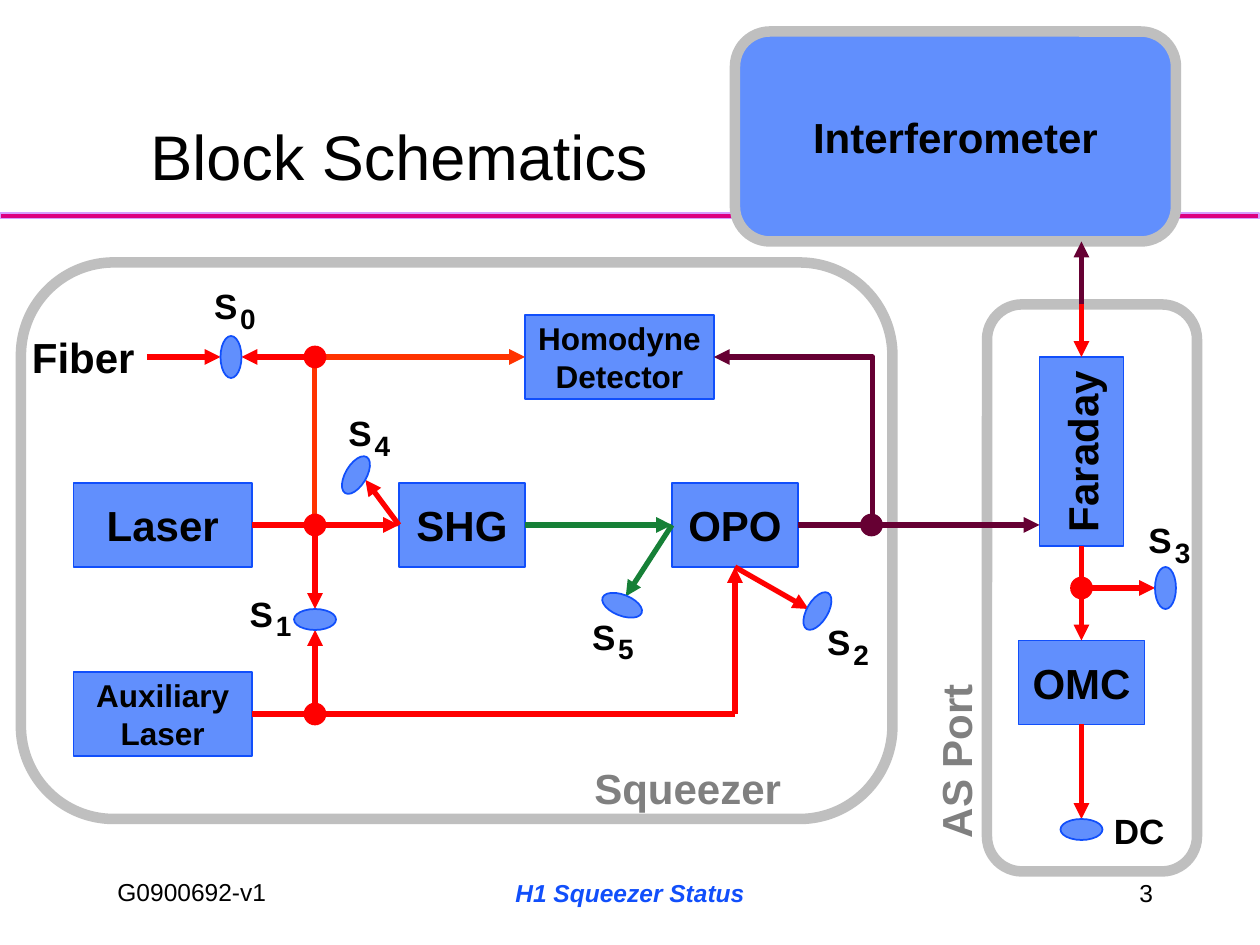
"""Build the block schematics slide on a grid of one twelfth of an inch."""
import pptx
import pptx.util
from lxml import etree
from pptx.dml.color import RGBColor
from pptx.enum.shapes import MSO_CONNECTOR, MSO_SHAPE
from pptx.enum.text import MSO_ANCHOR, PP_ALIGN
from pptx.oxml.ns import qn

COLORS = {
    "black": "000000", "gray": "808080", "frame": "BFBFBF",
    "box": "618FFD", "blue": "114FFB", "red": "FF0000",
    "orange": "FF3300", "green": "168037", "purple": "660033",
    "rule": "DC0081", "rule_edge": "D49FFF",
}


def color(name):
    return RGBColor.from_string(COLORS[name])


def grid(*values):
    return [pptx.util.Cm(value * 2.54 / 12) for value in values]


def write(shape, text, size, ink="black", align=PP_ALIGN.CENTER,
          anchor=MSO_ANCHOR.MIDDLE, bold=True, italic=False):
    frame = shape.text_frame
    frame.text = text
    frame.word_wrap = True
    frame.vertical_anchor = anchor
    for paragraph in frame.paragraphs:
        paragraph.alignment = align
        font = paragraph.font
        font.name = "Arial"
        font.size = pptx.util.Pt(size)
        font.bold = bold
        font.italic = italic
        font.color.rgb = color(ink)


def add_shape(slide, kind, bounds, fill, line, width=1):
    shape = slide.shapes.add_shape(kind, *grid(*bounds))
    shape.shadow.inherit = False
    if fill:
        shape.fill.solid()
        shape.fill.fore_color.rgb = color(fill)
    else:
        shape.fill.background()
    shape.line.color.rgb = color(line)
    shape.line.width = pptx.util.Pt(width)
    return shape


def add_frame(slide, bounds, fill=None):
    return add_shape(slide, MSO_SHAPE.ROUNDED_RECTANGLE, bounds, fill, "frame", 6)


def add_block(slide, text, bounds, size=24):
    block = add_shape(slide, MSO_SHAPE.RECTANGLE, bounds, "box", "blue")
    write(block, text, size)
    return block


def add_oval(slide, x, y, width, height, fill="box", line="blue", rotation=0):
    bounds = (x - width / 2, y - height / 2, width, height)
    oval = add_shape(slide, MSO_SHAPE.OVAL, bounds, fill, line)
    oval.rotation = rotation


def add_beam(slide, start, end, ink="red", arrow=True, bend=None):
    kind = MSO_CONNECTOR.STRAIGHT if bend is None else MSO_CONNECTOR.ELBOW
    beam = slide.shapes.add_connector(kind, *grid(*start, *end))
    beam.line.color.rgb = color(ink)
    beam.line.width = pptx.util.Pt(3)
    properties = beam._element.spPr
    if arrow:
        etree.SubElement(properties.find(qn("a:ln")), qn("a:tailEnd"), type="triangle")
    if bend is not None:
        guides = properties.find(qn("a:prstGeom")).get_or_add_avLst()
        etree.SubElement(guides, qn("a:gd"), name="adj1", fmla=f"val {bend}")
    etree.SubElement(properties, qn("a:effectLst"))


def add_text(shapes, text, bounds, size, anchor=MSO_ANCHOR.TOP, **style):
    box = shapes.add_textbox(*grid(*bounds))
    write(box, text, size, anchor=anchor, **style)
    return box


def add_sensor_label(slide, digit, x, y):
    group = slide.shapes.add_group_shape()
    add_text(group.shapes, "S", (x, y, 5, 5.25), 20)
    add_text(group.shapes, digit, (x + 2.7, y + 1.6, 3, 4.45), 16)


def add_heading(slide):
    title = slide.shapes.title
    title.left, title.top, title.width, title.height = grid(6, 8, 64, 11)
    write(title, "Block Schematics", 36, anchor=MSO_ANCHOR.BOTTOM, bold=False)
    add_shape(slide, MSO_SHAPE.RECTANGLE, (0, 20.3, 119.9, 0.5),
              "rule", "rule_edge", 0.75)


def add_footer(slide):
    middle = MSO_ANCHOR.MIDDLE
    add_text(slide.shapes, "G0900692-v1", (10, 82.95, 30, 4), 14, middle,
             align=PP_ALIGN.LEFT, bold=False)
    add_text(slide.shapes, "H1 Squeezer Status", (41, 82, 38, 6), 14, middle,
             ink="blue", italic=True)
    add_text(slide.shapes, "3", (86, 82, 25, 6), 14, middle,
             align=PP_ALIGN.RIGHT, bold=False)


def add_blocks(slide):
    add_frame(slide, (94, 29, 20, 54))
    write(add_frame(slide, (70, 3, 42, 20), "box"), "Interferometer", 24)
    add_frame(slide, (2, 25, 83, 53))
    add_block(slide, "Laser", (7, 46, 17, 8))
    add_block(slide, "Auxiliary\nLaser", (7, 64, 17, 8), 18)
    add_block(slide, "SHG", (38, 46, 12, 8))
    add_block(slide, "OPO", (64, 46, 12, 8))
    add_block(slide, "Homodyne\vDetector", (50, 30, 18, 8), 18)
    add_block(slide, "OMC", (97, 61, 12, 8))
    faraday = add_block(slide, "Faraday", (99, 34, 8, 18))
    faraday.text_frame._txBody.bodyPr.set("vert", "vert270")


def add_beams(slide):
    add_beam(slide, (30, 50), (50, 34), "orange", bend=-100)
    add_beam(slide, (76, 50), (68, 34), "purple", bend=-89100)
    add_beam(slide, (24, 68), (70, 68), arrow=False)
    for start, end in [
        ((24, 50), (38, 50)), ((70, 68), (70, 54)), ((30, 49), (30, 58)),
        ((30, 68), (30, 60)), ((30, 34), (23, 34)), ((14, 34), (21, 34)),
        ((103, 29), (103, 34)), ((103, 52), (103, 61)), ((103, 69), (103, 78)),
        ((103, 56), (110, 56)), ((70, 54), (77, 58)), ((38, 50), (34.8, 45.7)),
    ]:
        add_beam(slide, start, end)
    for start, end, ink in [
        ((50, 50), (64, 50), "green"), ((64, 50), (59.6, 56.8), "green"),
        ((83, 50), (99, 50), "purple"), ((103, 29), (103, 23), "purple"),
    ]:
        add_beam(slide, start, end, ink)
    for x, y, ink in [(30, 50, "red"), (30, 68, "red"), (30, 34, "red"),
                      (103, 56, "red"), (83, 50, "purple")]:
        add_oval(slide, x, y, 2, 2, ink, ink)


def add_sensors(slide):
    for x, y, width, height, rotation in [
        (22, 34, 2, 4, 0), (30, 59, 4, 2, 0), (103, 79, 4, 2, 0),
        (111, 56, 2, 4, 0), (59.25, 57.65, 4, 2, 21.5),
        (77.85, 58.2, 4, 2, 300.8), (33.9, 45.25, 4, 2, 300.8),
    ]:
        add_oval(slide, x, y, width, height, rotation=rotation)
    for digit, x, y in [("0", 19, 26.5), ("1", 22.4, 55.8), ("4", 31.8, 38.6),
                        ("5", 55, 58), ("2", 77.4, 58.5), ("3", 108, 48.8)]:
        add_sensor_label(slide, digit, x, y)


def add_captions(slide):
    add_text(slide.shapes, "Fiber", (1.8, 31, 12.25, 6), 24)
    add_text(slide.shapes, "Squeezer", (53, 72, 25, 6), 24, ink="gray")
    port = add_text(slide.shapes, "AS Port", (78.5, 69.5, 25, 6), 24, ink="gray")
    port.rotation = 270
    add_text(slide.shapes, "DC", (103.5, 76.5, 10, 5.25), 20)


def main():
    presentation = pptx.Presentation()
    presentation.slide_width, presentation.slide_height = grid(120, 90)
    slide = presentation.slides.add_slide(presentation.slide_layouts[5])
    add_heading(slide)
    add_blocks(slide)
    add_beams(slide)
    add_sensors(slide)
    add_captions(slide)
    add_footer(slide)
    presentation.save("out.pptx")


if __name__ == "__main__":
    main()
